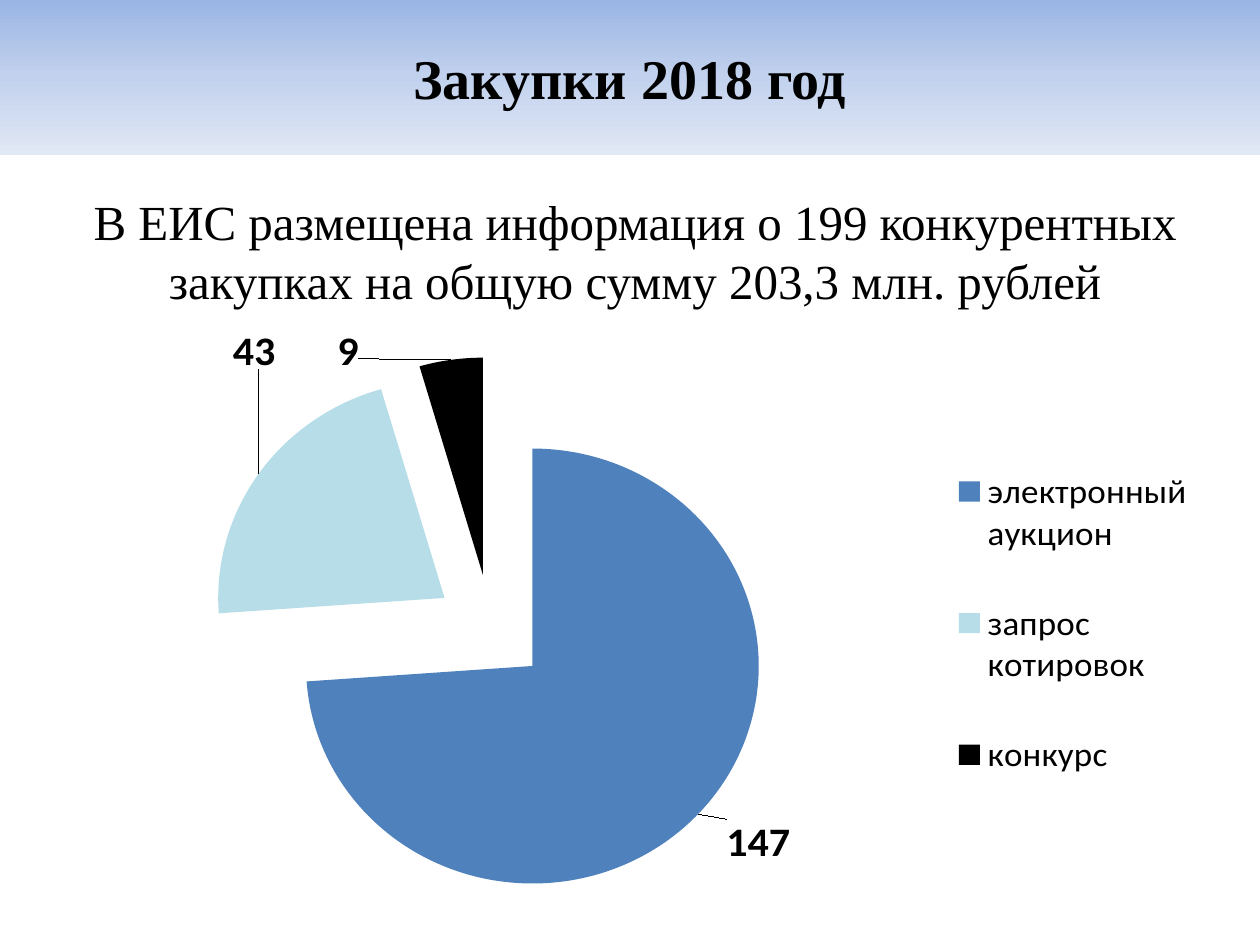
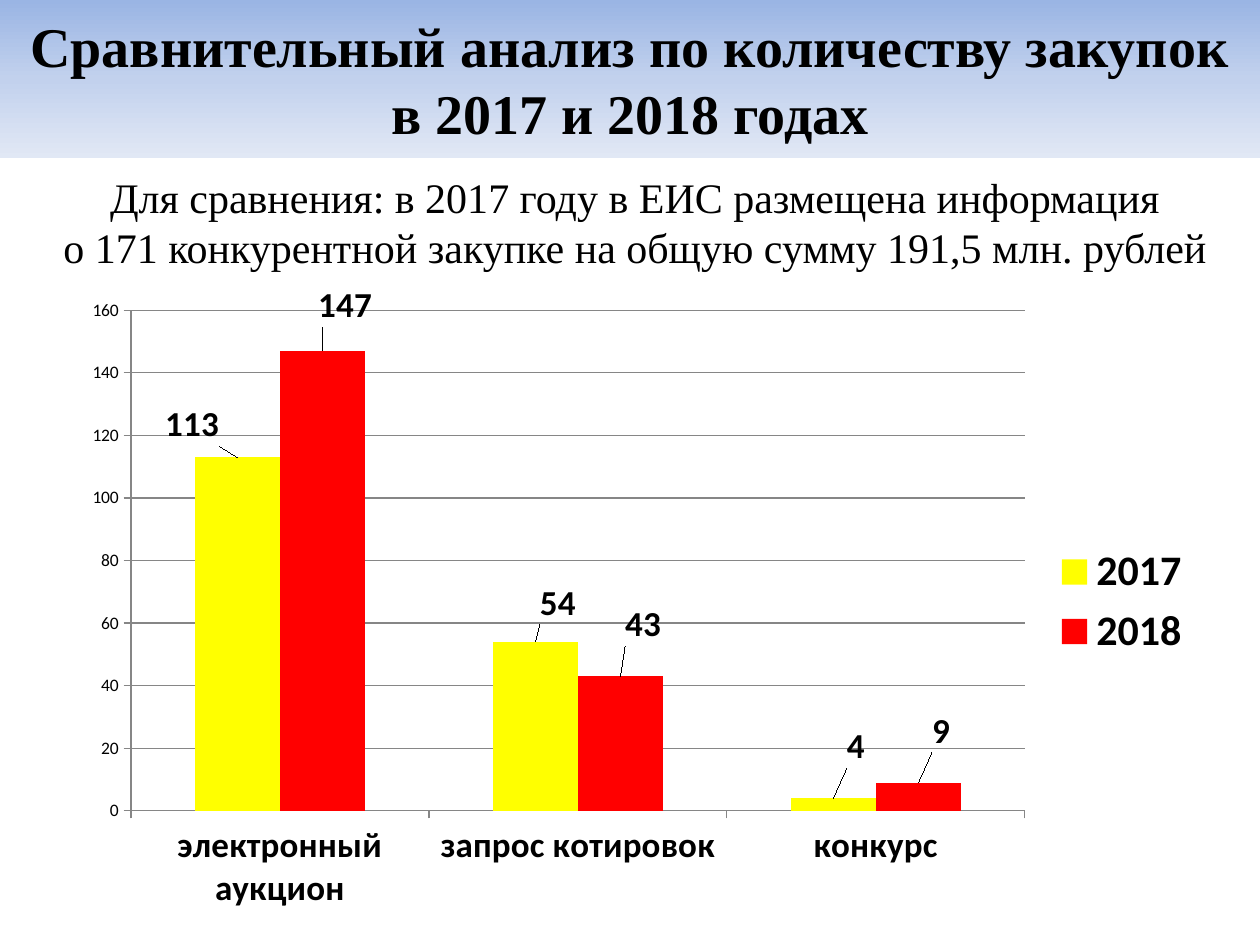
from dataclasses import dataclass

from lxml.etree import SubElement
from pptx import Presentation
from pptx.chart.chart import Chart
from pptx.chart.data import CategoryChartData
from pptx.dml.color import RGBColor
from pptx.enum.chart import XL_CHART_TYPE as ChartType
from pptx.enum.chart import XL_LABEL_POSITION as LabelPos
from pptx.enum.chart import XL_LEGEND_POSITION as LegendPos
from pptx.enum.chart import XL_TICK_MARK as Tick
from pptx.enum.shapes import MSO_SHAPE as Shape
from pptx.enum.text import MSO_ANCHOR as Anchor
from pptx.enum.text import PP_ALIGN as Align
from pptx.oxml.ns import qn
from pptx.util import Cm, Pt

TEXT_FONT, CHART_FONT = "Times New Roman", "Calibri"
BLACK, GRID = "000000", "868686"
BAND_STOPS = ((0, "9AB5E4"), (50, "C2D1ED"), (100, "E1E8F5"))
METHODS = ("электронный аукцион", "запрос котировок", "конкурс")
PIE_COLORS = ("4F81BD", "B7DEE8", BLACK)


@dataclass
class Box:
    left: float
    top: float
    width: float
    height: float

    def lengths(self) -> list:
        return [Cm(v) for v in (self.left, self.top, self.width, self.height)]


@dataclass
class Series:
    name: str
    values: tuple
    label_shifts: tuple
    color: str = ""


@dataclass
class Page:
    title: str
    band_height: float
    body: str
    body_top: float
    body_size: int
    kind: ChartType
    chart_box: Box
    series: tuple
    label_size: int


PAGES = (
    Page("Закупки 2018 год", 3.12,
         "В ЕИС размещена информация о 199 конкурентных закупках "
         "на общую сумму 203,3 млн. рублей", 3.73, 28,
         ChartType.PIE, Box(1.5, 6.12, 23.01, 12.4),
         (Series("2018", (147, 43, 9),
                 ((0.02, 0), (0.02, -0.17), (-0.08, 0.01))),), 24),
    Page("Сравнительный анализ по количеству закупок в 2017 и 2018 годах", 3.18,
         "Для сравнения: в 2017 году в ЕИС размещена информация\v"
         "о 171 конкурентной закупке на общую сумму 191,5 млн. рублей", 3.33, 24,
         ChartType.COLUMN_CLUSTERED, Box(1.5, 5.72, 22.81, 12.8),
         (Series("2017", (113, 54, 4),
                 ((-0.04, -0.01), (0.02, -0.02), (0.02, -0.04)), "FFFF00"),
          Series("2018", (147, 43, 9),
                 ((0.02, -0.03), (0.02, -0.04), (0.02, -0.04)), "FF0000")), 20),
)


def rgb(value: str) -> RGBColor:
    return RGBColor.from_string(value)


def style_font(font, size: int, bold: bool, name: str = CHART_FONT) -> None:
    font.size, font.bold, font.name = Pt(size), bold, name
    font.color.rgb = rgb(BLACK)


def write(sp, text: str, size: int, bold: bool, anchor: Anchor) -> None:
    tf = sp.text_frame
    tf.word_wrap, tf.vertical_anchor = True, anchor
    p = tf.paragraphs[0]
    p.text, p.alignment = text, Align.CENTER
    for r in p.runs:
        style_font(r.font, size, bold, TEXT_FONT)


def add_title_band(s, title: str, height: float) -> None:
    sp = s.shapes.add_shape(Shape.RECTANGLE, *Box(0, 0, 25.4, height).lengths())
    sp.shadow.inherit = False
    sp.line.fill.background()
    sp.fill.gradient()
    sp.fill.gradient_angle = 270
    stops = next(sp.element.iter(qn("a:gsLst")))
    stops.clear()
    for pos, color in BAND_STOPS:
        stop = SubElement(stops, qn("a:gs"), pos=str(pos * 1000))
        SubElement(stop, qn("a:srgbClr"), val=color)
    write(sp, title, 32, True, Anchor.MIDDLE)


def manual_layout(layout, **settings) -> None:
    """Fill a c:layout element; settings come in schema order."""
    manual = SubElement(layout, qn("c:manualLayout"))
    for tag, value in settings.items():
        SubElement(manual, qn(f"c:{tag}"), val=str(value))


def place(owner, after: str, **settings) -> None:
    """Give a chart part its own place, right after the named child."""
    for old in owner.findall(qn("c:layout")):
        owner.remove(old)
    layout = SubElement(owner, qn("c:layout"))
    if after:
        owner.find(qn(after)).addnext(layout)
    else:
        owner.insert(0, layout)
    manual_layout(layout, **settings)


def add_labels(ser, series: Series, size: int, leaders: bool) -> None:
    labels = ser.data_labels
    labels.show_value = True
    labels.position = LabelPos.OUTSIDE_END
    style_font(labels.font, size, True)
    for i in range(len(series.values)):
        label = ser.points[i].data_label
        label.position = LabelPos.OUTSIDE_END
        style_font(label.font, size, True)
    root = ser._element.find(qn("c:dLbls"))
    for item, (x, y) in zip(root.findall(qn("c:dLbl")), series.label_shifts):
        place(item, "c:idx", x=x, y=y)
    for old in root.findall(qn("c:showLeaderLines")):
        root.remove(old)
    if leaders:
        SubElement(root, qn("c:showLeaderLines"), val="1")


def style_pie(chart: Chart) -> None:
    ser = chart.plots[0].series[0]
    explosion = SubElement(ser._element, qn("c:explosion"), val="25")
    ser._element.find(qn("c:tx")).addnext(explosion)
    for i, color in enumerate(PIE_COLORS):
        fill = ser.points[i].format.fill
        fill.solid()
        fill.fore_color.rgb = rgb(color)
    style_font(chart.legend.font, 20, False)
    place(chart.legend._element, "c:legendPos", xMode="edge", yMode="edge",
          x=0.76, y=0.16, w=0.23, h=0.68)


def style_columns(chart: Chart, series: tuple) -> None:
    plot = chart.plots[0]
    plot.gap_width, plot.overlap = 150, 0
    for ser, source in zip(plot.series, series):
        ser.invert_if_negative = False
        ser.format.fill.solid()
        ser.format.fill.fore_color.rgb = rgb(source.color)
    values, methods = chart.value_axis, chart.category_axis
    values.minimum_scale, values.maximum_scale, values.major_unit = 0, 160, 20
    values.has_major_gridlines = True
    for part in (values, methods, values.major_gridlines):
        part.format.line.color.rgb = rgb(GRID)
        part.format.line.width = Pt(0.75)
    for axis in (values, methods):
        axis.major_tick_mark = Tick.OUTSIDE
    style_font(values.tick_labels.font, 10, False)
    style_font(methods.tick_labels.font, 20, True)
    style_font(chart.legend.font, 24, True)


def add_purchase_chart(s, page: Page) -> None:
    data = CategoryChartData()
    data.categories = METHODS
    for series in page.series:
        data.add_series(series.name, series.values)
    chart = s.shapes.add_chart(page.kind, *page.chart_box.lengths(), data).chart
    is_pie = page.kind == ChartType.PIE
    chart.has_title = False
    chart.has_legend = True
    chart.legend.position = LegendPos.RIGHT
    chart.legend.include_in_layout = False
    style_font(chart.font, 10, False)
    chart.plots[0].vary_by_categories = is_pie
    if is_pie:
        style_pie(chart)
        plot_place = dict(x=0, y=0.05, w=0.73, h=0.92)
    else:
        style_columns(chart, page.series)
        plot_place = dict(x=0.05, y=0.04, w=0.79, h=0.79)
    area = next(chart._chartSpace.iter(qn("c:plotArea")))
    place(area, "", layoutTarget="inner", xMode="edge", yMode="edge", **plot_place)
    for ser, series in zip(chart.plots[0].series, page.series):
        add_labels(ser, series, page.label_size, is_pie)


def add_page(prs, page: Page) -> None:
    s = prs.slides.add_slide(prs.slide_layouts[6])
    add_title_band(s, page.title, page.band_height)
    body = s.shapes.add_textbox(*Box(0.9, page.body_top, 23.8, 14.8).lengths())
    write(body, page.body, page.body_size, False, Anchor.TOP)
    add_purchase_chart(s, page)


def main() -> None:
    prs = Presentation()
    prs.slide_width, prs.slide_height = Cm(25.4), Cm(19.05)
    for page in PAGES:
        add_page(prs, page)
    prs.save("out.pptx")


if __name__ == "__main__":
    main()
